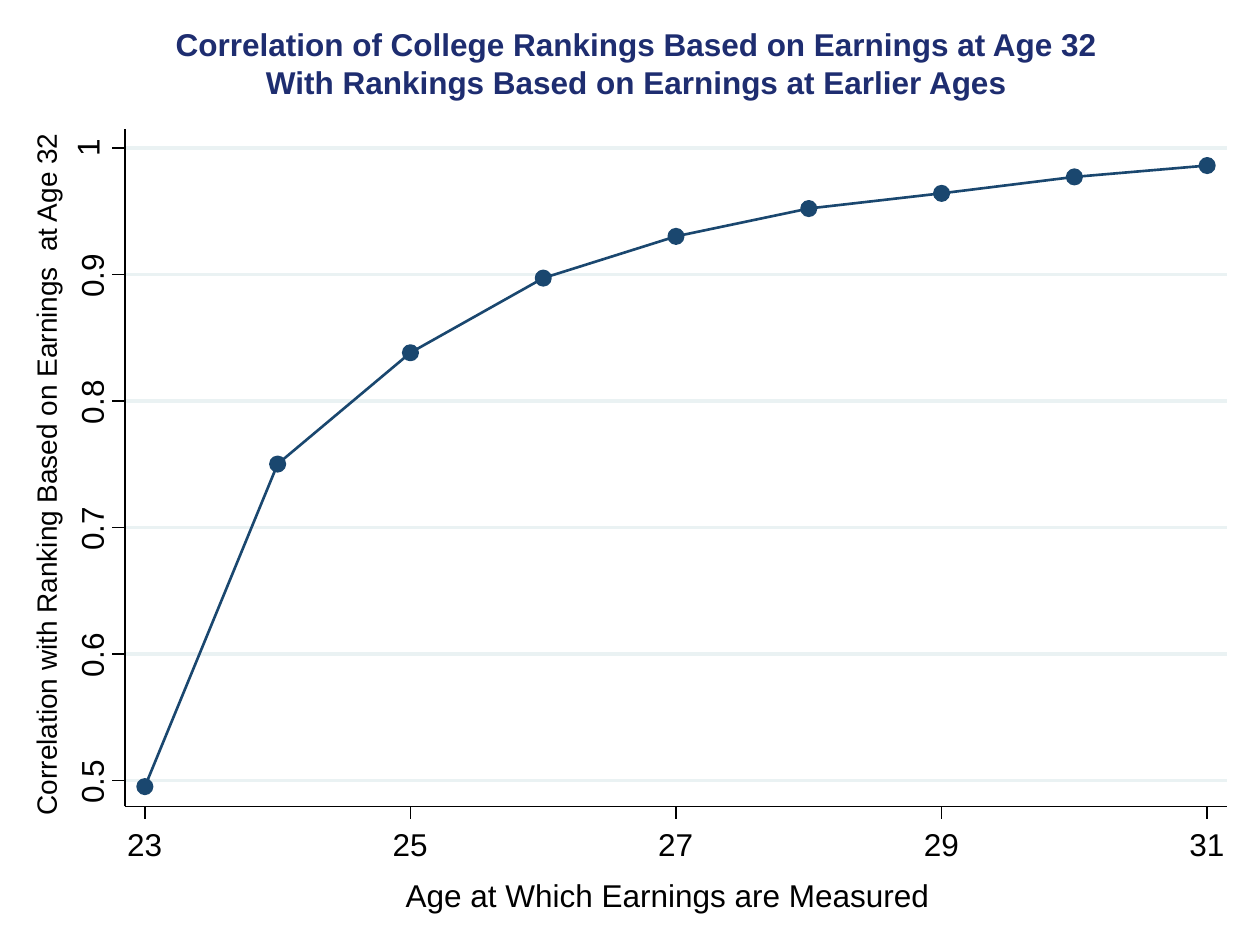
from dataclasses import dataclass

from lxml import etree
from pptx import Presentation
from pptx.dml.color import RGBColor
from pptx.enum.shapes import MSO_CONNECTOR, MSO_SHAPE
from pptx.enum.text import PP_ALIGN
from pptx.oxml.ns import qn
from pptx.util import Pt

STRAIGHT = MSO_CONNECTOR.STRAIGHT
OVAL = MSO_SHAPE.OVAL
LEFT, CENTER = PP_ALIGN.LEFT, PP_ALIGN.CENTER


@dataclass(frozen=True)
class Theme:
    """Colours, font, type sizes and line widths of the slide."""
    font: str = "Arial"
    ink: RGBColor = RGBColor(0x00, 0x00, 0x00)
    heading: RGBColor = RGBColor(0x1E, 0x2D, 0x70)
    series: RGBColor = RGBColor(0x1A, 0x47, 0x6F)
    grid: RGBColor = RGBColor(0xEA, 0xF2, 0xF3)
    body_size: float = 18
    side_size: float = 16
    axis_width: float = 0.88
    series_width: float = 1.5
    marker_width: float = 1.75


THEME = Theme()
AXIS_LEFT, AXIS_RIGHT = 71.4, 701.4
AXIS_TOP, AXIS_BOTTOM = 73.6, 460.8
TICK_LENGTH = 7.4
MARKER_SIZE = 8
CORRELATIONS = {
    23: 0.495, 24: 0.75, 25: 0.838, 26: 0.897, 27: 0.93,
    28: 0.952, 29: 0.964, 30: 0.977, 31: 0.986,
}
AGE_TICKS = range(23, 32, 2)
CORRELATION_TICKS = (0.5, 0.6, 0.7, 0.8, 0.9, 1)


def age_x(age):
    """Return the horizontal place of an age."""
    return 82.8 + (age - 23) * 75.88


def correlation_y(correlation):
    """Return the vertical place of a correlation."""
    return 84.5 + (1 - correlation) * 722.8


def add_line(slide, start, end, color, width):
    """Draw a straight line between two points."""
    line = slide.shapes.add_connector(
        STRAIGHT, *(Pt(length) for length in (*start, *end)))
    line.line.color.rgb = color
    line.line.width = Pt(width)
    etree.SubElement(line._element.spPr, qn("a:effectLst"))


def add_text(slide, text, box, *, size=THEME.body_size, color=THEME.ink,
             bold=False, align=LEFT, rotation=0):
    """Write text, one paragraph a line, in a box without margins."""
    label = slide.shapes.add_textbox(*(Pt(length) for length in box))
    label.rotation = rotation
    frame = label.text_frame
    frame.word_wrap = True
    frame.margin_left = frame.margin_right = Pt(0)
    frame.margin_top = frame.margin_bottom = Pt(0)
    frame.text = text
    for paragraph in frame.paragraphs:
        paragraph.alignment = align
        font = paragraph.runs[0].font
        font.name, font.size, font.bold = THEME.font, Pt(size), bold
        font.color.rgb = color


def add_gridlines(slide):
    """Draw a pale line across the plot at each correlation tick."""
    for correlation in CORRELATION_TICKS:
        y = correlation_y(correlation)
        add_line(slide, (AXIS_LEFT, y), (AXIS_RIGHT, y), THEME.grid, 0)


def add_curve(slide):
    """Draw the open curve through all the points."""
    points = [(Pt(age_x(age)), Pt(correlation_y(correlation)))
              for age, correlation in CORRELATIONS.items()]
    builder = slide.shapes.build_freeform(*points[0])
    builder.add_line_segments(points[1:], close=False)
    curve = builder.convert_to_shape()
    curve.shadow.inherit = False
    curve.fill.background()
    curve.line.color.rgb = THEME.series
    curve.line.width = Pt(THEME.series_width)


def add_marker(slide, x, y):
    """Draw a dot centred on a point of the curve."""
    marker = slide.shapes.add_shape(
        OVAL, Pt(x - MARKER_SIZE / 2), Pt(y - MARKER_SIZE / 2),
        Pt(MARKER_SIZE), Pt(MARKER_SIZE))
    marker.shadow.inherit = False
    marker.fill.solid()
    marker.fill.fore_color.rgb = THEME.series
    marker.line.color.rgb = THEME.series
    marker.line.width = Pt(THEME.marker_width)


def add_correlation_axis(slide):
    """Draw the vertical axis with its ticks, labels and title."""
    add_line(slide, (AXIS_LEFT, AXIS_BOTTOM), (AXIS_LEFT, AXIS_TOP),
             THEME.ink, THEME.axis_width)
    for correlation in CORRELATION_TICKS:
        y = correlation_y(correlation)
        add_line(slide, (AXIS_LEFT, y), (AXIS_LEFT - TICK_LENGTH, y),
                 THEME.ink, THEME.axis_width)
        if correlation == 1:
            box = (42.5, y - 17.5, 18.7, 25.9)
        else:
            box = (39.6, y - 10.1, 25.2, 21.6)
        add_text(slide, str(correlation), box, rotation=270)
    add_text(slide, "Correlation with Ranking Based on Earnings  at Age 32",
             (-170.6, 259.2, 393.8, 19.4), size=THEME.side_size, rotation=270)


def add_age_axis(slide):
    """Draw the horizontal axis with its ticks, labels and title."""
    add_line(slide, (AXIS_LEFT, AXIS_BOTTOM), (AXIS_RIGHT, AXIS_BOTTOM),
             THEME.ink, THEME.axis_width)
    for age in AGE_TICKS:
        x = age_x(age)
        add_line(slide, (x, AXIS_BOTTOM), (x, AXIS_BOTTOM + TICK_LENGTH),
                 THEME.ink, THEME.axis_width)
        add_text(slide, str(age), (x - 10.2, 471.6, 29.5, 25.9))
    add_text(slide, "Age at Which Earnings are Measured",
             (231.8, 500.4, 301.7, 21.6))


def main():
    """Build the slide and save it."""
    deck = Presentation()
    deck.slide_width, deck.slide_height = Pt(720), Pt(540)
    slide = deck.slides.add_slide(deck.slide_layouts[6])
    add_gridlines(slide)
    add_curve(slide)
    for age, correlation in CORRELATIONS.items():
        add_marker(slide, age_x(age), correlation_y(correlation))
    add_correlation_axis(slide)
    add_age_axis(slide)
    add_text(slide,
             "Correlation of College Rankings Based on Earnings at Age 32\n"
             "With Rankings Based on Earnings at Earlier Ages",
             (97.9, 14.4, 531.4, 43.9),
             color=THEME.heading, bold=True, align=CENTER)
    deck.save("out.pptx")


if __name__ == "__main__":
    main()
